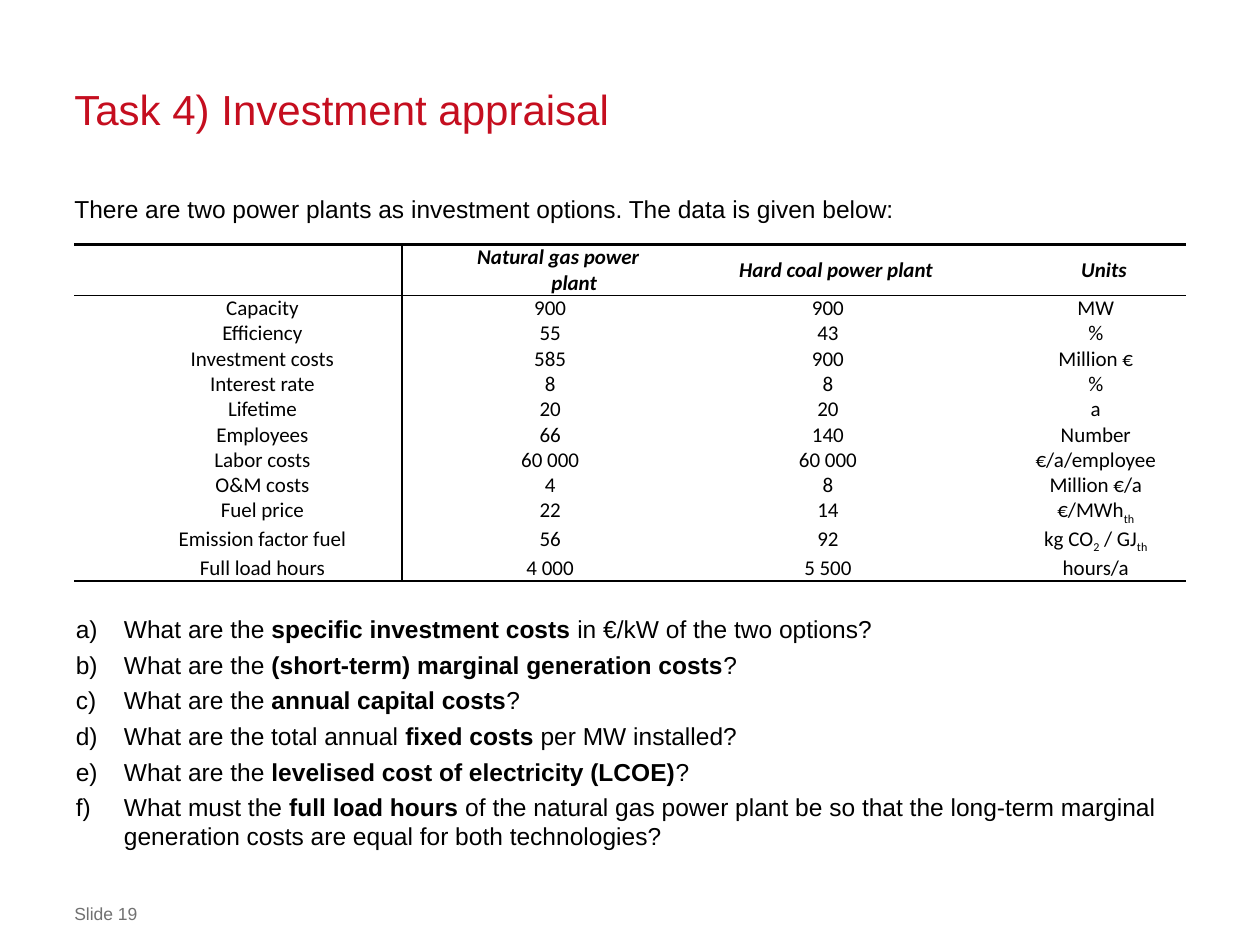
from lxml.etree import SubElement
from pptx import Presentation
from pptx.dml.color import RGBColor
from pptx.enum.text import MSO_ANCHOR, PP_ALIGN
from pptx.oxml.ns import qn
from pptx.util import Cm, Pt

COLORS = {"title": "C50E1F", "text": "000000", "footer": "717171"}
LEFT, WIDTH = 1.5, 22.4

# Text between bars is emphasised: subscript in the table, bold in the questions.
PLANT_DATA = [
    ("", "Natural gas power plant", "Hard coal power plant", "Units"),
    ("Capacity", "900", "900", "MW"),
    ("Efficiency", "55", "43", "%"),
    ("Investment costs", "585", "900", "Million €"),
    ("Interest rate", "8", "8", "%"),
    ("Lifetime", "20", "20", "a"),
    ("Employees", "66", "140", "Number"),
    ("Labor costs", "60 000", "60 000", "€/a/employee"),
    ("O&M costs", "4", "8", "Million €/a"),
    ("Fuel price", "22", "14", "€/MWh|th|"),
    ("Emission factor fuel", "56", "92", "kg CO|2| / GJ|th|"),
    ("Full load hours", "4 000", "5 500", "hours/a"),
]
COLUMN_WIDTHS = [6.6, 5.0, 6.2, 4.6]

INTRO = "There are two power plants as investment options. The data is given below:"
QUESTIONS = [
    "What are the |specific investment costs| in €/kW of the two options?",
    "What are the |(short-term) marginal generation costs|?",
    "What are the |annual capital costs|?",
    "What are the total annual |fixed costs| per MW installed?",
    "What are the |levelised cost of electricity (LCOE)|?",
    "What must the |full load hours| of the natural gas power plant be so that the "
    "long-term marginal generation costs are equal for both technologies?",
]


def make_bold(span):
    span.font.bold = True


def make_subscript(span):
    span.font._element.set("baseline", "-25000")


class PageBuilder:
    def __init__(self, page):
        self.page = page

    def fill_paragraph(self, para, text, size, color="text", font="Arial",
                       emphasise=make_bold):
        """Fill a paragraph; every second part between bars is emphasised."""
        para.font.name = font
        para.font.size = Pt(size)
        para.font.color.rgb = RGBColor.from_string(COLORS[color])
        for index, part in enumerate(text.split("|")):
            if part:
                span = para.add_run()
                span.text = part
                if index % 2:
                    emphasise(span)

    def indent(self, para, left, first):
        properties = para._p.get_or_add_pPr()
        properties.set("marL", str(Cm(left)))
        properties.set("indent", str(Cm(first)))
        return properties

    def text_box(self, top, height):
        frame = self.page.shapes.add_textbox(
            Cm(LEFT), Cm(top), Cm(WIDTH), Cm(height)).text_frame
        frame.word_wrap = True
        frame.margin_left = frame.margin_right = 0
        frame.margin_top = frame.margin_bottom = 0
        return frame

    def line(self, top, height, text, size, color="text", spacing=None):
        frame = self.text_box(top, height)
        para = frame.paragraphs[0]
        if spacing:
            para.line_spacing = Pt(spacing)
        self.fill_paragraph(para, text, size, color)
        return frame

    def questions(self, frame, texts, first_gap, gap):
        """Add a lettered list below the text already in the frame."""
        for index, text in enumerate(texts):
            para = frame.add_paragraph()
            properties = self.indent(para, 1, -0.97)
            SubElement(properties, qn("a:buFont")).set("typeface", "+mj-lt")
            SubElement(properties, qn("a:buAutoNum")).set("type", "alphaLcParenR")
            para.space_before = Pt(gap if index else first_gap)
            self.fill_paragraph(para, text, 14)

    def borders(self, cell, widths):
        """Draw the edges named in widths (points) and hide the others."""
        properties = cell._tc.get_or_add_tcPr()
        for edge in "LRTB":
            line = SubElement(properties, qn(f"a:ln{edge}"))
            if edge in widths:
                line.set("w", str(Pt(widths[edge])))
                fill = SubElement(line, qn("a:solidFill"))
                SubElement(fill, qn("a:srgbClr")).set("val", COLORS["text"])
            else:
                line.set("w", "0")
                SubElement(line, qn("a:noFill"))

    def table(self, top, rows, column_widths):
        header_height, row_height = 1.03, 0.51
        last = len(rows) - 1
        table = self.page.shapes.add_table(
            len(rows), len(column_widths), Cm(LEFT), Cm(top), Cm(WIDTH),
            Cm(header_height + last * row_height)).table
        table.first_row = table.horz_banding = False
        for column, width in zip(table.columns, column_widths):
            column.width = Cm(width)
        for r, texts in enumerate(rows):
            table.rows[r].height = Cm(row_height if r else header_height)
            for c, text in enumerate(texts):
                edges = {0: {"R": 1}, 1: {"L": 1}}.get(c, {})
                if r == 0:
                    edges = edges | {"T": 1.5, "B": 1}
                elif r == 1:
                    edges = edges | {"T": 1}
                elif r == last:
                    edges = edges | {"B": 1.5}
                self.cell(table.cell(r, c), text, edges, is_header=r == 0)

    def cell(self, cell, text, edges, is_header):
        self.borders(cell, edges)
        cell.fill.background()
        cell.margin_left = cell.margin_top = cell.margin_bottom = 0
        cell.margin_right = Cm(0.18 if is_header else 0.51)
        cell.vertical_anchor = MSO_ANCHOR.MIDDLE if is_header else MSO_ANCHOR.TOP
        para = cell.text_frame.paragraphs[0]
        para.alignment = PP_ALIGN.CENTER
        self.indent(para, 2.13, -0.64)
        para.font.bold = para.font.italic = is_header
        self.fill_paragraph(para, text, 12, font="Calibri", emphasise=make_subscript)


def main():
    deck = Presentation()
    deck.slide_width, deck.slide_height = Cm(25.4), Cm(19.05)
    builder = PageBuilder(deck.slides.add_slide(deck.slide_layouts[6]))

    builder.line(1.65, 3.17, "Task 4) Investment appraisal", 24, "title", spacing=30)
    body = builder.line(3.73, 12.93, INTRO, 14, spacing=22)
    builder.questions(body, QUESTIONS, first_gap=223.4, gap=3.5)
    builder.line(18.21, 0.43, "Slide 19", 10, "footer")
    builder.table(4.93, PLANT_DATA, COLUMN_WIDTHS)

    deck.save("out.pptx")


if __name__ == "__main__":
    main()
